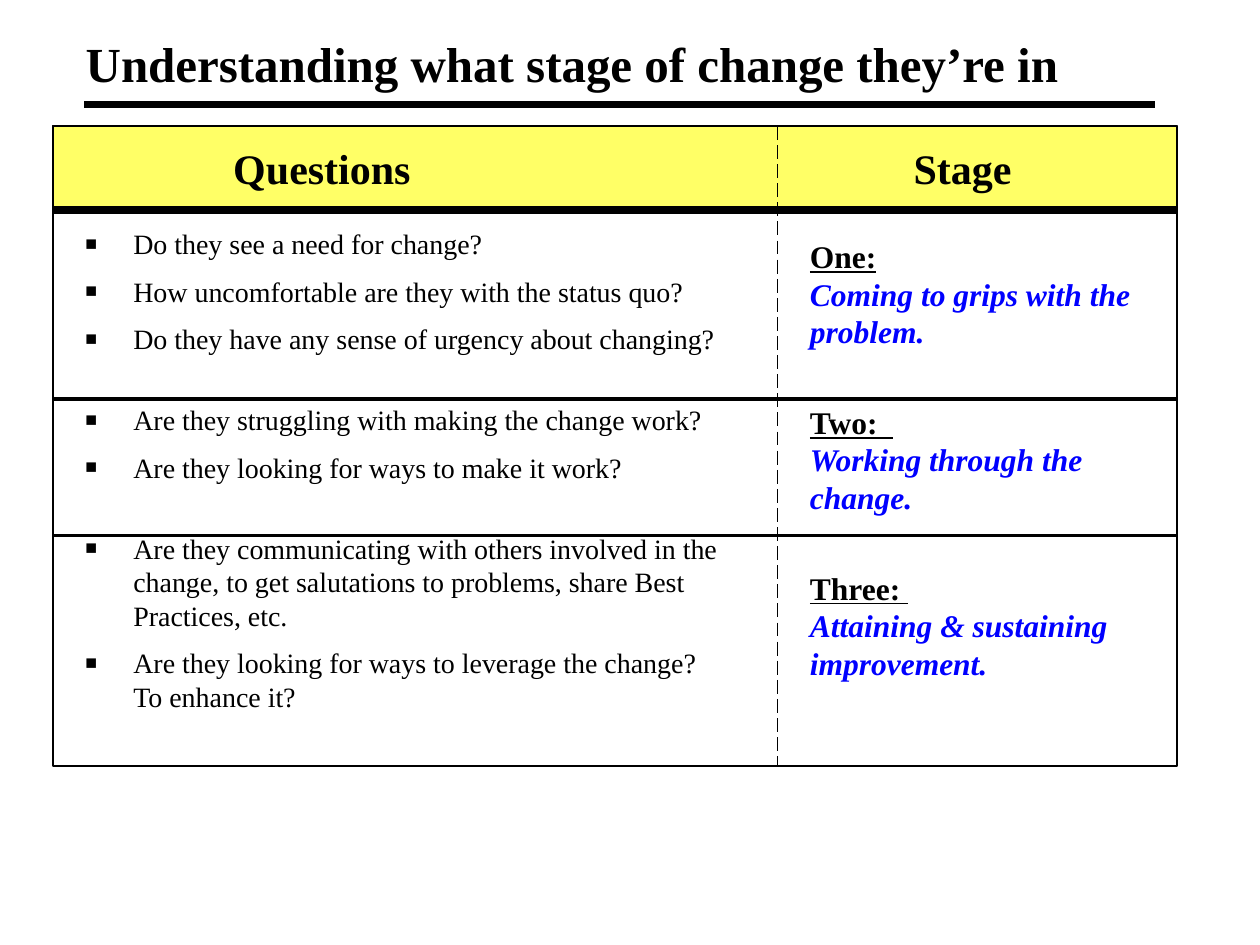
from lxml import etree
from pptx import Presentation
from pptx.dml.color import RGBColor
from pptx.enum.dml import MSO_LINE
from pptx.enum.shapes import MSO_CONNECTOR, MSO_SHAPE
from pptx.enum.text import MSO_ANCHOR, MSO_AUTO_SIZE, PP_ALIGN
from pptx.oxml import parse_xml
from pptx.oxml.ns import nsdecls, qn
from pptx.util import Inches, Pt

# Content
TITLE = "Understanding what stage of change they’re in"
HEADINGS = [("Questions", 1.75, 1.61), ("Stage", 7.15, 0.98)]  # text, left, width
QUESTIONS = [
    ["Do they see a need for change?",
     "How uncomfortable are they with the status quo?",
     "Do they have any sense of urgency about changing?"],
    ["Are they struggling with making the change work?",
     "Are they looking for ways to make it work?"],
    ["Are they communicating with others involved in the change, to get "
     "salutations to problems, share Best Practices, etc.",
     "Are they looking for ways to leverage the change?  To enhance it?"],
]
STAGES = [
    ("One:", "Coming to grips with the problem."),
    ("Two:  ", "Working through the change."),
    ("Three: ", "Attaining & sustaining improvement."),
]

# Style and grid
COLORS = {"ink": "000000", "header": "FFFF66", "stage": "0000FF"}
FONT = "Times New Roman"
LEFT, TOP, WIDTH, HEIGHT = 0.42, 1, 8.92, 5.08
HEADER_HEIGHT = 0.67
RIGHT, BOTTOM = LEFT + WIDTH, TOP + HEIGHT
DIVIDER = 6.17
ROW_RULES = [(TOP + HEADER_HEIGHT, 4.5), (3.17, 2.25), (4.25, 2.25)]  # y, points

prs = Presentation()
prs.slide_width, prs.slide_height = Inches(10), Inches(7.5)
slide = prs.slides.add_slide(prs.slide_layouts[5])


def color(name):
    return RGBColor.from_string(COLORS[name])


def add_rule(x1, y1, x2, y2, points, dash=None):
    rule = slide.shapes.add_connector(
        MSO_CONNECTOR.STRAIGHT, Inches(x1), Inches(y1), Inches(x2), Inches(y2))
    rule.line.color.rgb = color("ink")
    rule.line.width = Pt(points)
    if dash:
        rule.line.dash_style = dash
    etree.SubElement(rule._element.spPr, qn("a:effectLst"))


def add_frame(height, fill=None):
    frame = slide.shapes.add_shape(
        MSO_SHAPE.RECTANGLE, Inches(LEFT), Inches(TOP), Inches(WIDTH), Inches(height))
    frame.shadow.inherit = False
    if fill:
        frame.fill.solid()
        frame.fill.fore_color.rgb = color(fill)
    else:
        frame.fill.background()
    frame.line.color.rgb = color("ink")
    frame.line.width = Pt(1)


def add_text(left, top, width, height, wrap=True):
    box = slide.shapes.add_textbox(Inches(left), Inches(top), Inches(width), Inches(height))
    box.text_frame.word_wrap = wrap
    box.text_frame.auto_size = MSO_AUTO_SIZE.SHAPE_TO_FIT_TEXT
    return box.text_frame


def next_paragraph(frame, first, space):
    if first:
        return frame.paragraphs[0]
    paragraph = frame.add_paragraph()
    paragraph.space_before = Pt(space)
    return paragraph


def add_run(paragraph, text, size, ink="ink", bold=False, italic=False, underline=False):
    run = paragraph.add_run()
    run.text = text
    font = run.font
    font.name, font.size = FONT, Pt(size)
    font.bold, font.italic, font.underline = bold, italic, underline
    font.color.rgb = color(ink)
    return run


def add_text_shadow(run):
    fill = run._r.rPr.find(qn("a:solidFill"))
    fill.addnext(parse_xml(
        f'<a:effectLst {nsdecls("a")}><a:outerShdw blurRad="38100" dist="38100" dir="2700000">'
        '<a:srgbClr val="C0C0C0"/></a:outerShdw></a:effectLst>'))


def add_square_bullet(paragraph):
    props = paragraph._p.get_or_add_pPr()
    props.set("marL", str(Inches(0.38)))
    props.set("indent", str(-Inches(0.38)))
    etree.SubElement(props, qn("a:buSzPct")).set("val", "70000")
    etree.SubElement(props, qn("a:buFont")).set("typeface", FONT)
    etree.SubElement(props, qn("a:buChar")).set("char", "■")


# Title and its rule
title = slide.shapes.title
title.left, title.top, title.width, title.height = map(Inches, (0.58, 0.25, 8.58, 0.5))
title.text_frame.auto_size = MSO_AUTO_SIZE.NONE
title.text_frame.vertical_anchor = MSO_ANCHOR.MIDDLE
title.text_frame.paragraphs[0].alignment = PP_ALIGN.LEFT
add_run(title.text_frame.paragraphs[0], TITLE, 28, bold=True)
add_rule(0.67, 0.83, 9.17, 0.83, 3.75)

# Header band and outer frame
add_frame(HEADER_HEIGHT, "header")
add_frame(HEIGHT)
for heading, left, width in HEADINGS:
    paragraph = add_text(left, 1.08, width, 0.5, wrap=False).paragraphs[0]
    paragraph.alignment = PP_ALIGN.CENTER
    add_run(paragraph, heading, 24, bold=True)

# Questions, with a wider gap before each new stage
questions = add_text(0.58, 1.75, 5.25, 4.11)
for stage, group in enumerate(QUESTIONS):
    for item, question in enumerate(group):
        paragraph = next_paragraph(questions, stage == item == 0, 8 if item else 27)
        add_square_bullet(paragraph)
        add_run(paragraph, question, 16)

# Stages
stages = add_text(6.33, 1.83, 2.92, 3.71)
for index, (label, meaning) in enumerate(STAGES):
    paragraph = next_paragraph(stages, index == 0, 30)
    add_text_shadow(add_run(paragraph, label, 18, bold=True, underline=True))
    paragraph.add_line_break()
    add_text_shadow(add_run(paragraph, meaning, 18, "stage", bold=True, italic=True))

# Row rules and column divider
for y, points in ROW_RULES:
    add_rule(LEFT, y, RIGHT, y, points)
add_rule(DIVIDER, TOP, DIVIDER, BOTTOM, 1, MSO_LINE.LONG_DASH)

prs.save("out.pptx")
